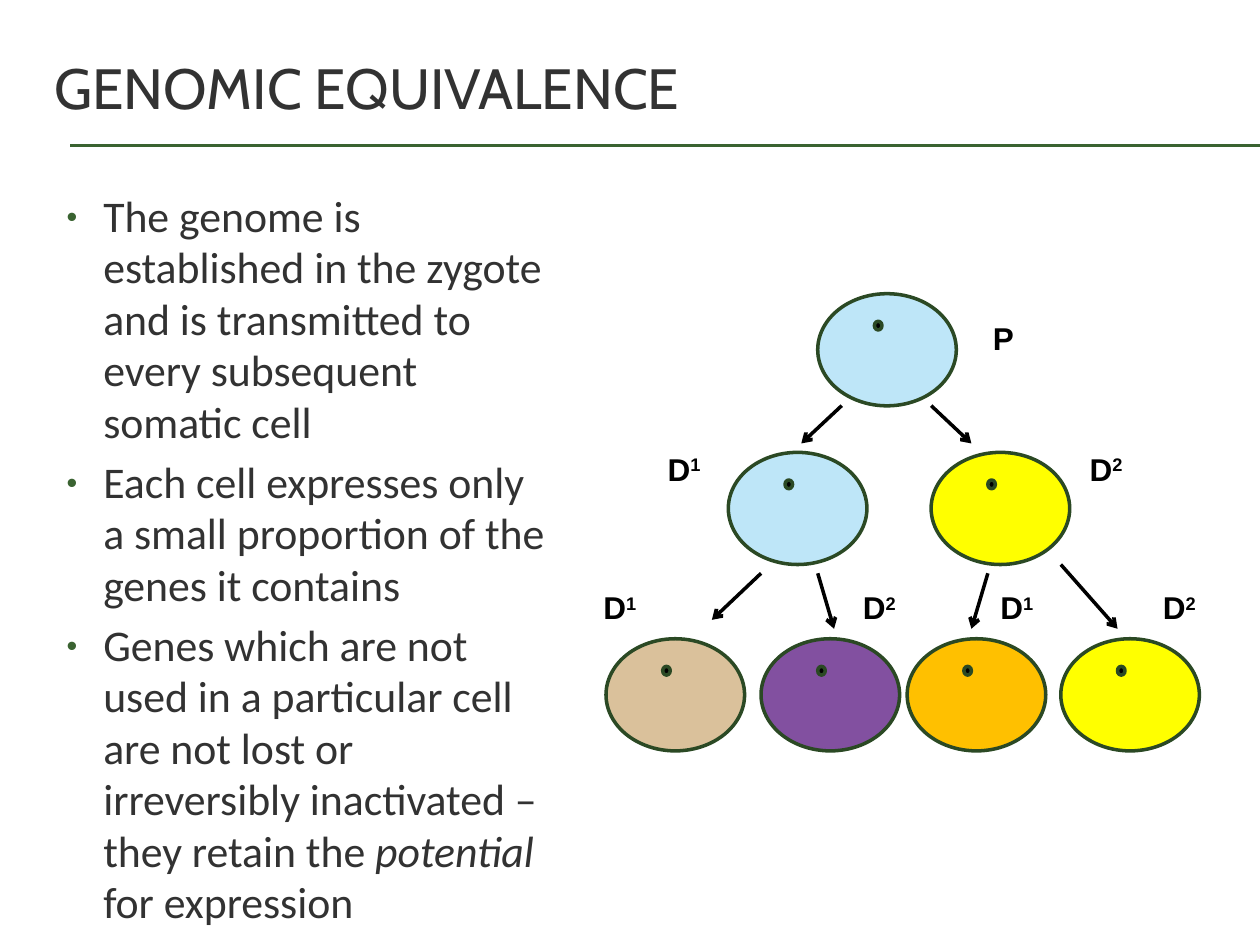
from lxml import etree
from pptx import Presentation
from pptx.dml.color import RGBColor
from pptx.enum import shapes, text
from pptx.oxml.ns import qn
from pptx.util import Pt

COLORS = {"text": "323232", "accent": "3A6331", "outline": "2B4924",
          "black": "000000", "blue": "BEE6F8", "yellow": "FFFF00",
          "purple": "8250A0", "tan": "DAC19B", "orange": "FFC000"}

TITLE = "GENOMIC EQUIVALENCE"
BULLETS = [
    [("The genome is established in the zygote and is transmitted to every "
      "subsequent somatic cell", False)],
    [("Each cell expresses only a small proportion of the genes it contains", False)],
    [("Genes which are not used in a particular cell are not lost or "
      "irreversibly inactivated – they retain the ", False),
     ("potential", True), (" for expression", False)],
]
GENERATIONS = [
    (167.8, [(467.3, "blue")]),
    (258.5, [(416.2, "blue"), (532.1, "yellow")]),
    (365, [(434.9, "purple"), (346.3, "tan"), (606.2, "yellow"), (518.4, "orange")]),
]
LABEL_ROWS = [
    (178.6, [(560.2, "P", "")]),
    (253.4, [(374.4, "D", "1"), (615.6, "D", "2")]),
    (332.6, [(337.7, "D", "1"), (486, "D", "2"), (657.4, "D", "2"), (564.5, "D", "1")]),
]
ARROWS = [
    (532.1, 231.8, 555.1, 253.4), (481, 231.8, 457.9, 253.4),
    (434.9, 327.6, 406.8, 354.2), (467.3, 327.6, 476.6, 359.3),
    (564.5, 327.6, 555.1, 359.3), (606.2, 322.6, 638.6, 359.3),
]
RULES = [82.8, 83.5]
CELL_SIZE = (79.2, 64.1)
NUCLEUS_OFFSET = (32.4, 15.8)
NUCLEUS_SIZE = (4.3, 5)


def color(name):
    return RGBColor.from_string(COLORS[name])


def place(shape, left, top, width, height):
    shape.left, shape.top = Pt(left), Pt(top)
    shape.width, shape.height = Pt(width), Pt(height)


def style_font(font, name, size, color_name, bold=False):
    font.name, font.size, font.bold = name, Pt(size), bold
    font.color.rgb = color(color_name)


def add_title(slide):
    title = slide.shapes.title
    place(title, 23.8, 36, 684, 66.2)
    frame = title.text_frame
    frame.text = TITLE
    frame.auto_size = text.MSO_AUTO_SIZE.NONE
    frame.vertical_anchor = text.MSO_ANCHOR.MIDDLE
    frame.margin_top, frame.margin_bottom = Pt(0), Pt(39)
    paragraph = frame.paragraphs[0]
    paragraph.alignment = text.PP_ALIGN.LEFT
    style_font(paragraph.font, "Cabin", 32.4, "text")


def add_bullet(paragraph):
    properties = paragraph._p.get_or_add_pPr()
    properties.set("marL", str(Pt(28)))
    properties.set("indent", str(-Pt(21)))
    bullet_color = etree.SubElement(properties, qn("a:buClr"))
    etree.SubElement(bullet_color, qn("a:srgbClr"), val=COLORS["accent"])
    etree.SubElement(properties, qn("a:buSzPct"), val="70000")
    etree.SubElement(properties, qn("a:buFont"), typeface="Arial")
    etree.SubElement(properties, qn("a:buChar"), char="•")


def add_body(slide):
    body = slide.placeholders[1]
    place(body, 23.8, 105.8, 296.6, 414)
    frame = body.text_frame
    frame.auto_size = text.MSO_AUTO_SIZE.NONE
    for index, runs in enumerate(BULLETS):
        paragraph = frame.add_paragraph() if index else frame.paragraphs[0]
        add_bullet(paragraph)
        paragraph.line_spacing = 0.98
        paragraph.space_before = Pt(5 if index else 0)
        style_font(paragraph.font, "Calibri", 25, "text")
        for words, italic in runs:
            run = paragraph.add_run()
            run.text = words
            if italic:
                run.font.italic = True


def add_line(slide, start_x, start_y, end_x, end_y, color_name, width, arrow=False):
    line = slide.shapes.add_connector(
        shapes.MSO_CONNECTOR.STRAIGHT, Pt(start_x), Pt(start_y), Pt(end_x), Pt(end_y))
    line.line.color.rgb = color(color_name)
    line.line.width = Pt(width)
    if arrow:
        etree.SubElement(line.line._get_or_add_ln(), qn("a:tailEnd"), type="arrow")
    etree.SubElement(line._element.spPr, qn("a:effectLst"))


def add_ellipse(slide, left, top, size, fill):
    ellipse = slide.shapes.add_shape(
        shapes.MSO_SHAPE.OVAL, Pt(left), Pt(top), Pt(size[0]), Pt(size[1]))
    ellipse.shadow.inherit = False
    ellipse.fill.solid()
    ellipse.fill.fore_color.rgb = color(fill)
    ellipse.line.color.rgb = color("outline")
    ellipse.line.width = Pt(2)


def add_label(slide, left, top, letter, superscript):
    box = slide.shapes.add_textbox(
        Pt(left), Pt(top), Pt(37.4 if superscript else 28.1), Pt(28.8))
    box.text_frame.word_wrap = False
    paragraph = box.text_frame.paragraphs[0]
    style_font(paragraph.font, "Arial", 18, "black", bold=True)
    paragraph.add_run().text = letter
    if superscript:
        run = paragraph.add_run()
        run.text = superscript
        run._r.get_or_add_rPr().set("baseline", "30000")


def main():
    presentation = Presentation()
    presentation.slide_width, presentation.slide_height = Pt(720), Pt(540)
    slide = presentation.slides.add_slide(presentation.slide_layouts[1])
    for y in RULES:
        add_line(slide, 40.3, y, 720, y, "accent", 0.75)
    add_title(slide)
    add_body(slide)
    for top, cells in GENERATIONS:
        for left, fill in cells:
            add_ellipse(slide, left, top, CELL_SIZE, fill)
            add_ellipse(slide, left + NUCLEUS_OFFSET[0], top + NUCLEUS_OFFSET[1],
                        NUCLEUS_SIZE, "black")
    for arrow in ARROWS:
        add_line(slide, *arrow, "black", 2, arrow=True)
    for top, labels in LABEL_ROWS:
        for left, letter, superscript in labels:
            add_label(slide, left, top, letter, superscript)
    presentation.save("out.pptx")


if __name__ == "__main__":
    main()
